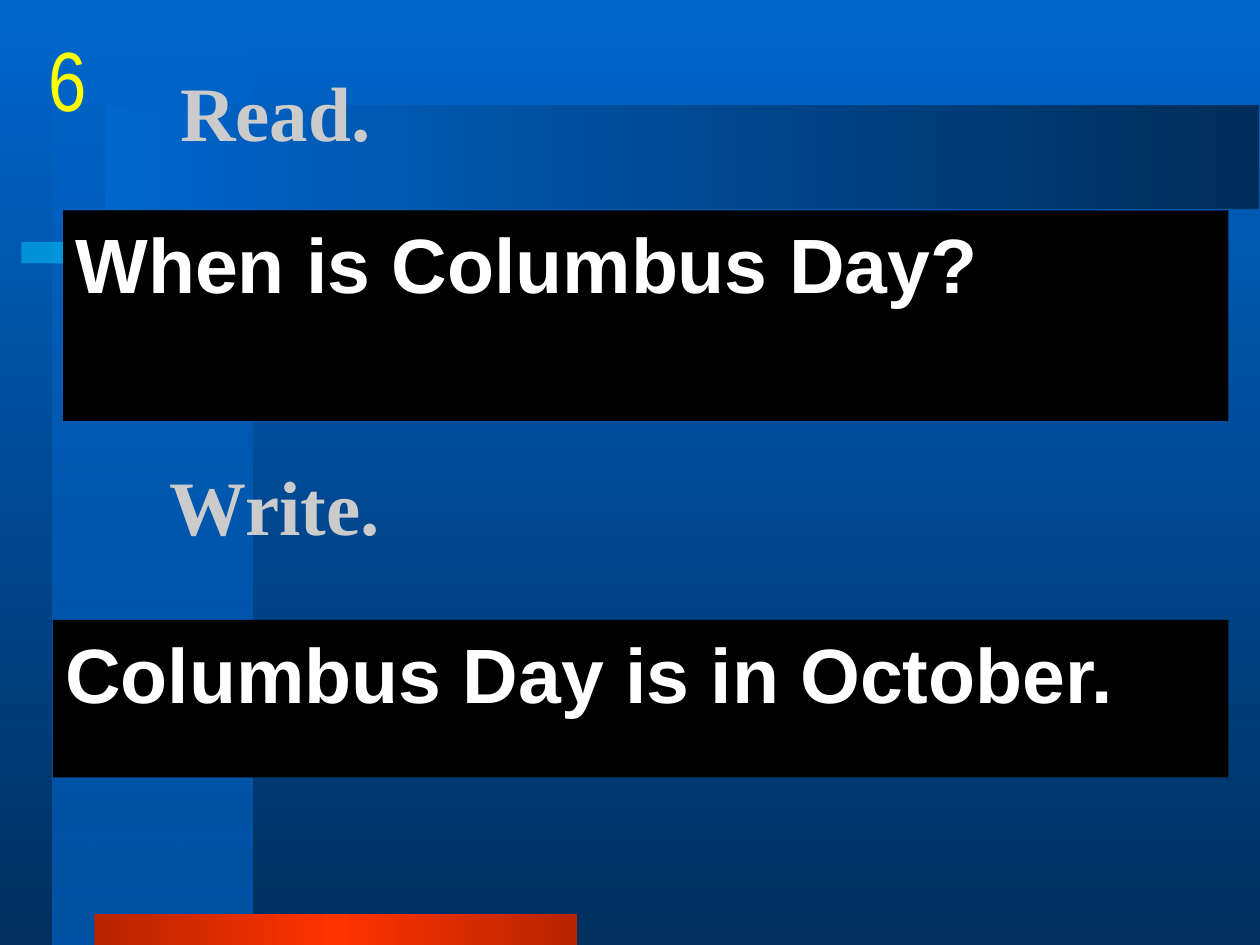
import pptx
import pptx.util
import pptx.dml.color
import pptx.enum.shapes
import pptx.enum.text
import pptx.oxml
import pptx.oxml.ns
from lxml import etree

Inches = pptx.util.Inches
Pt = pptx.util.Pt
qn = pptx.oxml.ns.qn
MIDDLE = pptx.enum.text.MSO_ANCHOR.MIDDLE
TOP = pptx.enum.text.MSO_ANCHOR.TOP

COLORS = {
    "blue": "0066CC", "navy": "002F5E", "column": "0053A6", "band": "002D5A",
    "cyan": "00CCFF", "red": "FF3300", "dark red": "B62400",
    "black": "000000", "white": "FFFFFF", "gray": "CBCBCB",
    "yellow": "FFFF00", "orange": "FF9933",
}
HEADING = {"name": "Times New Roman", "size": Pt(44), "bold": True}
SENTENCE = {"name": "Arial", "size": Pt(44), "bold": True}
NUMBER = {"name": "Arial Narrow", "size": Pt(48), "bold": False}


def rgb(color):
    return pptx.dml.color.RGBColor.from_string(COLORS[color])


def set_alpha(color_element, percent):
    etree.SubElement(color_element, qn("a:alpha"), val=str(percent * 1000))


def paint_gradient(fill, stops, angle=0):
    """Fill with (position %, color, opacity %) stops; angle is clockwise."""
    fill.gradient()
    fill.gradient_angle = -angle % 360
    stop_list = fill.gradient_stops[0]._gs.getparent()
    for stop in list(stop_list):
        stop_list.remove(stop)
    for position, color, opacity in stops:
        stop = etree.SubElement(stop_list, qn("a:gs"), pos=str(position * 1000))
        value = etree.SubElement(stop, qn("a:srgbClr"), val=COLORS[color])
        if opacity < 100:
            set_alpha(value, opacity)
    return stop_list


def place(shape, box):
    for side, length in zip(("left", "top", "width", "height"), box):
        setattr(shape, side, Inches(length))


def add_bar(slide, box):
    bar = slide.shapes.add_shape(
        pptx.enum.shapes.MSO_SHAPE.RECTANGLE, *map(Inches, box))
    bar.shadow.inherit = False
    bar.line.fill.background()
    return bar


def add_gradient_bar(slide, box, stops, angle=0):
    paint_gradient(add_bar(slide, box).fill, stops, angle)


def add_accent(slide, box):
    accent = add_bar(slide, box)
    accent.fill.solid()
    accent.fill.fore_color.rgb = rgb("cyan")
    set_alpha(accent.fill._xPr.find(".//" + qn("a:srgbClr")), 50)


def write(shape, text, style, anchor, wrap=True):
    frame = shape.text_frame
    layout = {"word_wrap": wrap, "vertical_anchor": anchor,
              "auto_size": pptx.enum.text.MSO_AUTO_SIZE.NONE}
    for name, value in layout.items():
        setattr(frame, name, value)
    paragraph = frame.paragraphs[0]
    run = paragraph.add_run()
    run.text = text
    for name, value in style.items():
        setattr(run.font, name, value)
    return paragraph, run.font


def write_heading(shape, box, text):
    place(shape, box)
    paragraph, font = write(shape, text, HEADING, MIDDLE)
    paragraph.alignment = pptx.enum.text.PP_ALIGN.LEFT
    font.color.rgb = rgb("gray")


def write_sentence(shape, box, text):
    """White sentence on a black panel, with a hanging indent."""
    place(shape, box)
    shape.fill.solid()
    shape.fill.fore_color.rgb = rgb("black")
    paragraph, font = write(shape, text, SENTENCE, TOP)
    font.color.rgb = rgb("white")
    properties = paragraph._p.get_or_add_pPr()
    properties.set("marL", str(Inches(0.38)))
    properties.set("indent", str(-Inches(0.38)))
    before = etree.SubElement(properties, qn("a:spcBef"))
    etree.SubElement(before, qn("a:spcPct"), val="20000")
    etree.SubElement(properties, qn("a:buNone"))


def write_number(shape, box, text):
    place(shape, box)
    paragraph, font = write(shape, text, NUMBER, TOP, wrap=False)
    paragraph.alignment = pptx.enum.text.PP_ALIGN.CENTER
    stop_list = paint_gradient(
        font.fill, [(0, "yellow", 100), (100, "orange", 100)])
    gradient = stop_list.getparent()
    gradient.remove(gradient.find(qn("a:lin")))
    center = etree.SubElement(gradient, qn("a:path"))
    center.set("path", "rect")
    etree.SubElement(center, qn("a:fillToRect"),
                     dict.fromkeys("ltrb", "50000"))


def add_text_box(slide):
    return slide.shapes.add_textbox(0, 0, Inches(1), Inches(1))


def bring_to_front(shape):
    shape.element.getparent().append(shape.element)
    return shape


def add_backdrop(slide):
    paint_gradient(slide.background.fill,
                   [(0, "blue", 100), (100, "navy", 100)], 90)
    add_gradient_bar(slide, (0.42, 0, 1.58, 7.5),
                     [(0, "blue", 50), (100, "column", 100)], 90)
    add_accent(slide, (0.17, 1.92, 5.17, 0.17))
    add_gradient_bar(slide, (0.75, 7.25, 3.83, 0.25),
                     [(0, "dark red", 100), (50, "red", 100),
                      (100, "dark red", 100)])
    add_gradient_bar(slide, (0.83, 0.83, 9.16, 0.83),
                     [(0, "blue", 100), (100, "band", 100)])


def main():
    deck = pptx.Presentation()
    deck.slide_width, deck.slide_height = Inches(10), Inches(7.5)
    slide = deck.slides.add_slide(deck.slide_layouts[1])
    add_backdrop(slide)
    write_heading(bring_to_front(slide.shapes.title),
                  (1.33, 0.25, 8.5, 1.25), "Read.")
    write_sentence(bring_to_front(slide.placeholders[1]),
                   (0.5, 1.67, 9.25, 1.67), "When is Columbus Day?")
    write_heading(add_text_box(slide), (1.25, 3.17, 8.5, 1.67), "Write.")
    write_sentence(add_text_box(slide), (0.42, 4.92, 9.33, 1.25),
                   "Columbus Day is in October.")
    write_number(add_text_box(slide), (0.33, 0.17, 0.42, 0.83), "6")
    deck.save("out.pptx")


if __name__ == "__main__":
    main()
